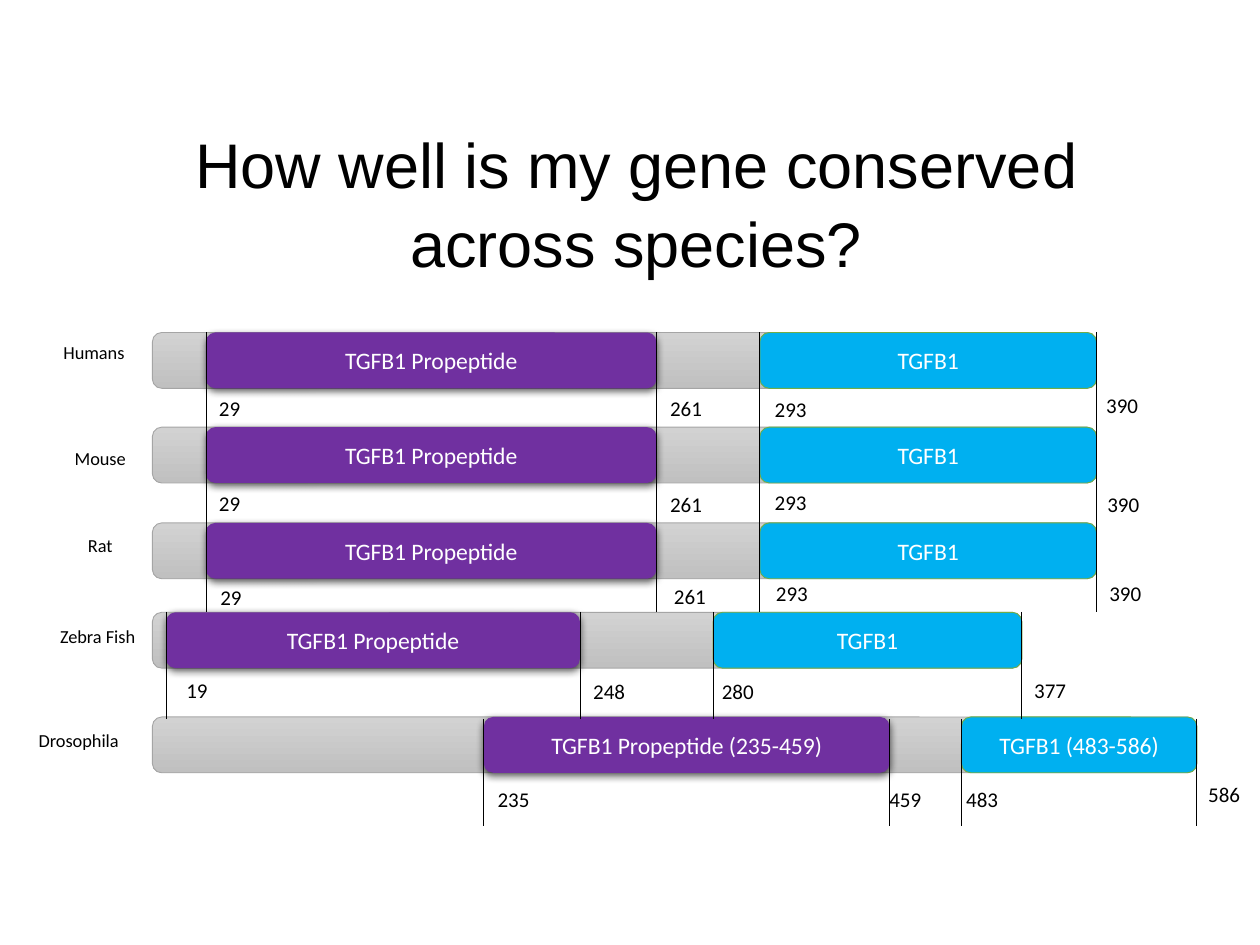
from lxml.etree import SubElement
from pptx import Presentation
from pptx.dml.color import RGBColor
from pptx.enum.shapes import MSO_CONNECTOR, MSO_SHAPE
from pptx.enum.text import MSO_ANCHOR, PP_ALIGN
from pptx.oxml import parse_xml
from pptx.oxml.ns import nsdecls, qn
from pptx.util import Pt

BLACK = RGBColor(0x00, 0x00, 0x00)
WHITE = RGBColor(0xFF, 0xFF, 0xFF)
PURPLE = RGBColor(0x70, 0x30, 0xA0)
BLUE = RGBColor(0x00, 0xB0, 0xF0)
GREEN = RGBColor(0x70, 0xAD, 0x47)
GREY = RGBColor(0xA5, 0xA5, 0xA5)
BAR_SHADES = (RGBColor(0xD2, 0xD2, 0xD2), RGBColor(0xC0, 0xC0, 0xC0))

TITLE = "How well is my gene conserved across species?"
PROPEPTIDE, GROWTH_FACTOR = "TGFB1 Propeptide", "TGFB1"
MAMMAL_EDGES = (117.7, 375.1, 434.2, 626.6)
FISH_EDGES = (95, 331.4, 407.5, 583.9)
FLY_EDGES = (276.5, 508.3, 549.4, 683.9)

SPECIES = [
    {"name": "Humans", "name_box": (23.8, 191.5, 59.8), "top": 190, "edges": MAMMAL_EDGES,
     "domains": (PROPEPTIDE, GROWTH_FACTOR),
     "positions": [("29", 118, 222.5), ("261", 375.8, 222.5), ("293", 435.6, 223), ("390", 625, 221)]},
    {"name": "Mouse", "name_box": (27.4, 252, 59.8), "top": 244.1, "edges": MAMMAL_EDGES,
     "domains": (PROPEPTIDE, GROWTH_FACTOR),
     "positions": [("29", 118, 277), ("261", 375.8, 277.2), ("293", 435.6, 276.5), ("390", 625.7, 277.2)]},
    {"name": "Rat", "name_box": (27.4, 301.7, 59.8), "top": 298.8, "edges": MAMMAL_EDGES,
     "domains": (PROPEPTIDE, GROWTH_FACTOR),
     "positions": [("29", 118.8, 330.5), ("261", 378, 329.8), ("293", 436.3, 328.3), ("390", 626.8, 328.3)]},
    {"name": "Zebra Fish", "name_box": (25.9, 353.5, 59.8), "top": 349.9, "edges": FISH_EDGES,
     "domains": (PROPEPTIDE, GROWTH_FACTOR),
     "positions": [("19", 99.4, 383.8), ("248", 331.9, 384.5), ("280", 405.4, 384.5), ("377", 583.9, 383.8)]},
    {"name": "Drosophila", "name_box": (4.3, 413.3, 81.4), "top": 409.7, "edges": FLY_EDGES,
     "domains": ("TGFB1 Propeptide (235-459)", "TGFB1 (483-586)"),
     "positions": [("235", 277.2, 445.7), ("459", 501.1, 445.7), ("483", 545, 445.7), ("586", 683.3, 442.8)]},
]
GUIDES = [(MAMMAL_EDGES, 190, 349.6), (FISH_EDGES, 349.6, 411), (FLY_EDGES, 410.8, 472)]

BAR_LEFT, BAR_HEIGHT = 87.1, 31.9
NUMBER_WIDTH, NUMBER_HEIGHT, NAME_HEIGHT = 46, 21.6, 20.2
SHADOW = (
    f'<a:effectLst {nsdecls("a")}><a:outerShdw blurRad="57150" dist="19050" dir="5400000" '
    'algn="ctr" rotWithShape="0"><a:srgbClr val="000000"><a:alpha val="63000"/></a:srgbClr>'
    '</a:outerShdw></a:effectLst>'
)


def write(frame, text, size, color, alignment, font="Calibri"):
    frame.word_wrap = True
    paragraph = frame.paragraphs[0]
    paragraph.alignment = alignment
    run = paragraph.add_run()
    run.text = text
    run.font.name = font
    run.font.size = Pt(size)
    run.font.color.rgb = color
    return paragraph


def add_label(slide, text, left, top, width, height, size, alignment):
    box = slide.shapes.add_textbox(Pt(left), Pt(top), Pt(width), Pt(height))
    write(box.text_frame, text, size, BLACK, alignment)


def add_block(slide, left, right, top, line_color=None):
    shape = slide.shapes.add_shape(
        MSO_SHAPE.ROUNDED_RECTANGLE, Pt(left), Pt(top), Pt(right - left), Pt(BAR_HEIGHT))
    shape.shadow.inherit = False
    if line_color is None:
        shape.line.fill.background()
    else:
        shape.line.color.rgb = line_color
        shape.line.width = Pt(0.5)
    return shape


def add_bar(slide, right, top):
    bar = add_block(slide, BAR_LEFT, right, top, GREY)
    bar.fill.gradient()
    bar.fill.gradient_angle = 270
    for stop, color, position in zip(bar.fill.gradient_stops, BAR_SHADES, (0, 1)):
        stop.color.rgb = color
        stop.position = position


def add_domain(slide, text, left, right, top, color, line_color=None):
    domain = add_block(slide, left, right, top, line_color)
    domain.fill.solid()
    domain.fill.fore_color.rgb = color
    frame = domain.text_frame
    frame.vertical_anchor = MSO_ANCHOR.MIDDLE
    frame.margin_left = frame.margin_right = Pt(5)
    frame.margin_top = frame.margin_bottom = Pt(3)
    write(frame, text, 13.5, WHITE, PP_ALIGN.CENTER)
    return domain


def add_species(slide, species):
    top = species["top"]
    start, end, factor_start, factor_end = species["edges"]
    propeptide, factor = species["domains"]
    add_bar(slide, factor_end, top)
    domain = add_domain(slide, propeptide, start, end, top, PURPLE)
    properties = domain.element.spPr
    properties.replace(properties.find(qn("a:effectLst")), parse_xml(SHADOW))
    add_domain(slide, factor, factor_start, factor_end, top, BLUE, GREEN)
    left, name_top, width = species["name_box"]
    add_label(slide, species["name"], left, name_top, width, NAME_HEIGHT, 10.5, PP_ALIGN.CENTER)


def add_guide(slide, x, top, bottom):
    guide = slide.shapes.add_connector(MSO_CONNECTOR.STRAIGHT, Pt(x), Pt(top), Pt(x), Pt(bottom))
    guide.line.color.rgb = BLACK
    guide.line.width = Pt(0.5)
    SubElement(guide.element.spPr, qn("a:effectLst"))


def add_title(slide):
    title = slide.shapes.title
    title.left, title.top, title.width, title.height = Pt(90), Pt(66), Pt(547.2), Pt(94.3)
    title.text_frame.vertical_anchor = MSO_ANCHOR.TOP
    paragraph = write(title.text_frame, TITLE, 36, BLACK, PP_ALIGN.CENTER, "Arial")
    paragraph.line_spacing = 1.05


def main():
    presentation = Presentation()
    presentation.slide_width, presentation.slide_height = Pt(720), Pt(540)
    slide = presentation.slides.add_slide(presentation.slide_layouts[5])
    add_title(slide)
    for species in SPECIES:
        add_species(slide, species)
    for edges, top, bottom in GUIDES:
        for x in edges:
            add_guide(slide, x, top, bottom)
    for species in SPECIES:
        for number, left, top in species["positions"]:
            add_label(slide, number, left, top, NUMBER_WIDTH, NUMBER_HEIGHT, 12, PP_ALIGN.LEFT)
    presentation.save("out.pptx")


if __name__ == "__main__":
    main()
